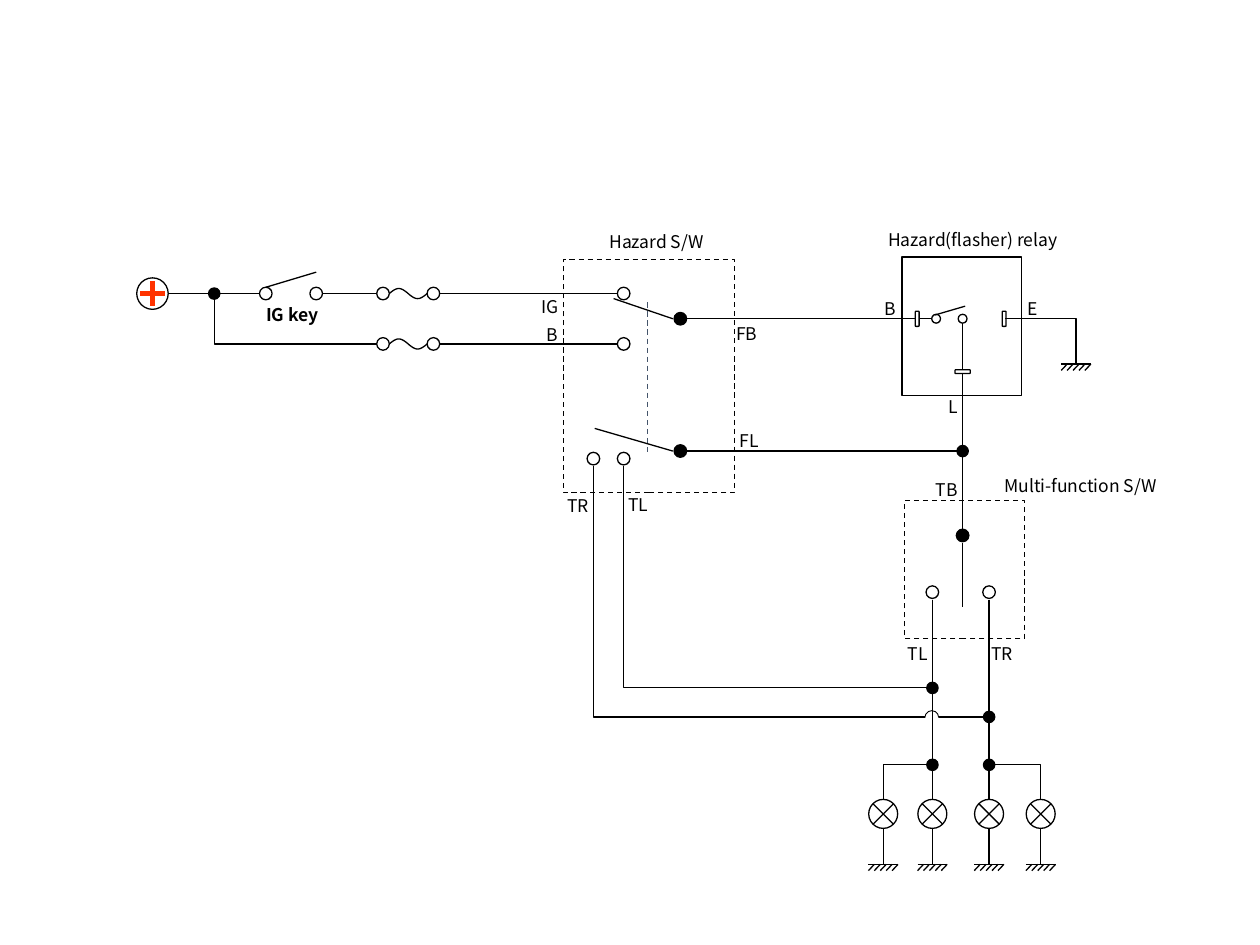
import math

from lxml import etree
from pptx import Presentation
from pptx import util as u
from pptx.dml.color import RGBColor
from pptx.enum import dml, shapes, text
from pptx.oxml.ns import qn

KIND = shapes.MSO_SHAPE
LINK = shapes.MSO_CONNECTOR


def color(code):
    return RGBColor.from_string(code)


class Board:
    font = "Noto Sans CJK KR"
    ink = "000000"
    size = 10
    width = 0.75

    def __init__(self, slide):
        self.slide = slide
        self.items = slide.shapes

    def stroke(self, item, ink=None, width=None, dash=False):
        item.line.color.rgb = color(ink or self.ink)
        item.line.width = u.Pt(width or self.width)
        if dash:
            item.line.dash_style = dml.MSO_LINE.DASH

    def shape(self, kind, x, y, w, h, fill=None, **style):
        item = self.items.add_shape(kind, *map(u.Inches, (x, y, w, h)))
        item.shadow.inherit = False
        if fill:
            item.fill.solid()
            item.fill.fore_color.rgb = color(fill)
        else:
            item.fill.background()
        self.stroke(item, **style)
        return item

    def box(self, x, y, w, h, dash=False):
        return self.shape(KIND.RECTANGLE, x, y, w, h, dash=dash)

    def ring(self, x, y, d=0.1, fill=None):
        """Circle of diameter d centred on x, y."""
        return self.shape(KIND.OVAL, x - d / 2, y - d / 2, d, d, fill)

    def dot(self, x, y, d=0.09):
        return self.ring(x, y, d, self.ink)

    def pin(self, x, y, w, h):
        """Relay terminal centred on x, y."""
        return self.shape(KIND.ROUNDED_RECTANGLE, x - w / 2, y - h / 2, w, h)

    def wire(self, x1, y1, x2, y2, kind=LINK.STRAIGHT, **style):
        item = self.items.add_connector(kind, *map(u.Inches, (x1, y1, x2, y2)))
        self.stroke(item, **style)
        etree.SubElement(item._element.spPr, qn("a:effectLst"))
        return item

    def bend(self, x1, y1, x2, y2):
        """Wire with one corner, horizontal leg first."""
        item = self.wire(x1, y1, x2, y2, LINK.ELBOW)
        item._element.spPr.find(qn("a:prstGeom")).set("prst", "bentConnector2")

    def fuse(self, x, y, gap=0.4, high=0.04, steps=32):
        """Two terminals joined by a wave; x is the left terminal."""
        self.ring(x, y)
        self.ring(x + gap, y)
        left, span = x + 0.05, gap - 0.1
        points = [
            (u.Inches(left + span * i / steps),
             u.Inches(y - high * math.sin(2 * math.pi * i / steps)))
            for i in range(steps + 1)
        ]
        path = self.items.build_freeform(*points[0])
        path.add_line_segments(points[1:], close=False)
        item = path.convert_to_shape()
        item.shadow.inherit = False
        item.fill.background()
        self.stroke(item)

    def ground(self, x, y, w=0.235, count=5):
        left, step = x - w / 2, w / count
        self.wire(left, y, left + w, y)
        for i in range(count):
            self.wire(left + i * step, y + 0.05, left + (i + 1) * step, y)

    def lamp(self, x, y=6.46, r=0.08):
        self.ring(x, y, 0.23)
        self.wire(x - r, y + r, x + r, y - r)
        self.wire(x - r, y - r, x + r, y + r)
        self.wire(x, 6.58, x, 6.86)
        self.ground(x, 6.86)

    def label(self, words, x, y, w=0.39, bold=False):
        item = self.items.add_textbox(*map(u.Inches, (x, y, w, 0.27)))
        frame = item.text_frame
        frame.word_wrap = True
        frame.margin_top = frame.margin_bottom = 0
        frame.vertical_anchor = text.MSO_ANCHOR.MIDDLE
        line = frame.paragraphs[0]
        line.text = words
        line.alignment = text.PP_ALIGN.CENTER
        line.font.name = self.font
        line.font.size = u.Pt(self.size)
        line.font.bold = bold
        line.font.color.rgb = color(self.ink)


def supply(b):
    ig, bat = 2.33, 2.73
    b.ring(1.21, ig, 0.25)
    b.wire(1.11, ig, 1.31, ig, ink="FF3300", width=3)
    b.wire(1.21, ig - 0.1, 1.21, ig + 0.1, ink="FF3300", width=3)
    b.wire(1.34, ig, 2.06, ig)
    b.dot(1.7, ig)
    b.ring(2.11, ig)
    b.ring(2.51, ig)
    b.wire(2.11, 2.28, 2.51, 2.16)
    b.wire(2.56, ig, 2.99, ig)
    b.bend(2.99, bat, 1.7, 2.37)
    for y in (ig, bat):
        b.fuse(3.04, y)
        b.wire(3.49, y, 4.9, y)
        b.ring(4.95, y)


def hazard(b):
    b.box(4.47, 2.06, 1.36, 1.85, dash=True)
    b.wire(5.14, 2.4, 5.14, 3.6, ink="44546A", dash=True)
    b.wire(4.87, 2.37, 5.34, 2.53)
    b.wire(4.72, 3.4, 5.34, 3.58)
    for y, end in ((2.53, 7.27), (3.58, 7.6)):
        b.dot(5.4, y, 0.1)
        b.wire(5.45, y, end, y)
    for x in (4.71, 4.95):
        b.ring(x, 3.64)


def relay(b):
    y = 2.53
    b.box(7.16, 2.04, 0.95, 1.1)
    b.pin(7.28, y, 0.03, 0.12)
    b.pin(7.97, y, 0.03, 0.12)
    b.pin(7.64, 2.95, 0.12, 0.03)
    b.wire(7.3, y, 7.4, y)
    b.ring(7.43, y, 0.07)
    b.ring(7.64, y, 0.07)
    b.wire(7.42, 2.5, 7.66, 2.43)
    b.wire(7.64, 2.56, 7.64, 2.94)
    b.bend(7.98, y, 8.54, 2.88)
    b.ground(8.54, 2.89)


def turn(b):
    """Multi-function switch with its feeds and lamps."""
    mid, left, right = 7.64, 7.4, 7.85
    b.box(7.18, 3.97, 0.95, 1.1, dash=True)
    b.wire(mid, 2.97, mid, 4.2)
    b.dot(mid, 3.58)
    b.dot(mid, 4.25, 0.1)
    b.wire(mid, 4.31, mid, 4.82)
    for x, out in ((left, 7.01), (right, 8.26)):
        b.ring(x, 4.7)
        b.wire(x, 4.76, x, 6.34)
        b.dot(x, 6.07)
        b.bend(x, 6.07, out, 6.34)
        b.lamp(x)
        b.lamp(out)
    b.dot(left, 5.46)
    b.bend(left, 5.46, 4.95, 3.7)
    b.dot(right, 5.69)
    b.bend(7.34, 5.69, 4.71, 3.7)
    b.wire(7.45, 5.69, right, 5.69)
    hop = b.shape(KIND.ARC, 7.34, 5.64, 0.11, 0.11, width=0.5)
    hop.adjustments[0] = 107.05


def main():
    deck = Presentation()
    deck.slide_width, deck.slide_height = u.Inches(10), u.Inches(7.5)
    board = Board(deck.slides.add_slide(deck.slide_layouts[6]))
    for part in (supply, hazard, relay, turn):
        part(board)

    board.label("IG key", 2, 2.36, 0.64, bold=True)
    board.label("Hazard S/W", 4.58, 1.78, 1.5 - 0.24)
    board.label("Hazard(flasher) relay", 6.78, 1.77, 1.88)
    board.label("Multi-function S/W", 7.82, 3.72, 1.51)
    for words, x, y in (
        ("IG", 4.17, 2.3), ("B", 4.19, 2.52),
        ("FB", 5.73, 2.51), ("FL", 5.75, 3.36),
        ("TR", 4.39, 3.88), ("TL", 4.87, 3.87),
        ("B", 6.87, 2.31), ("E", 8, 2.31),
        ("L", 7.37, 3.09), ("TB", 7.32, 3.75),
        ("TL", 7.09, 5.05), ("TR", 7.76, 5.05),
    ):
        board.label(words, x, y)
    deck.save("out.pptx")


if __name__ == "__main__":
    main()
